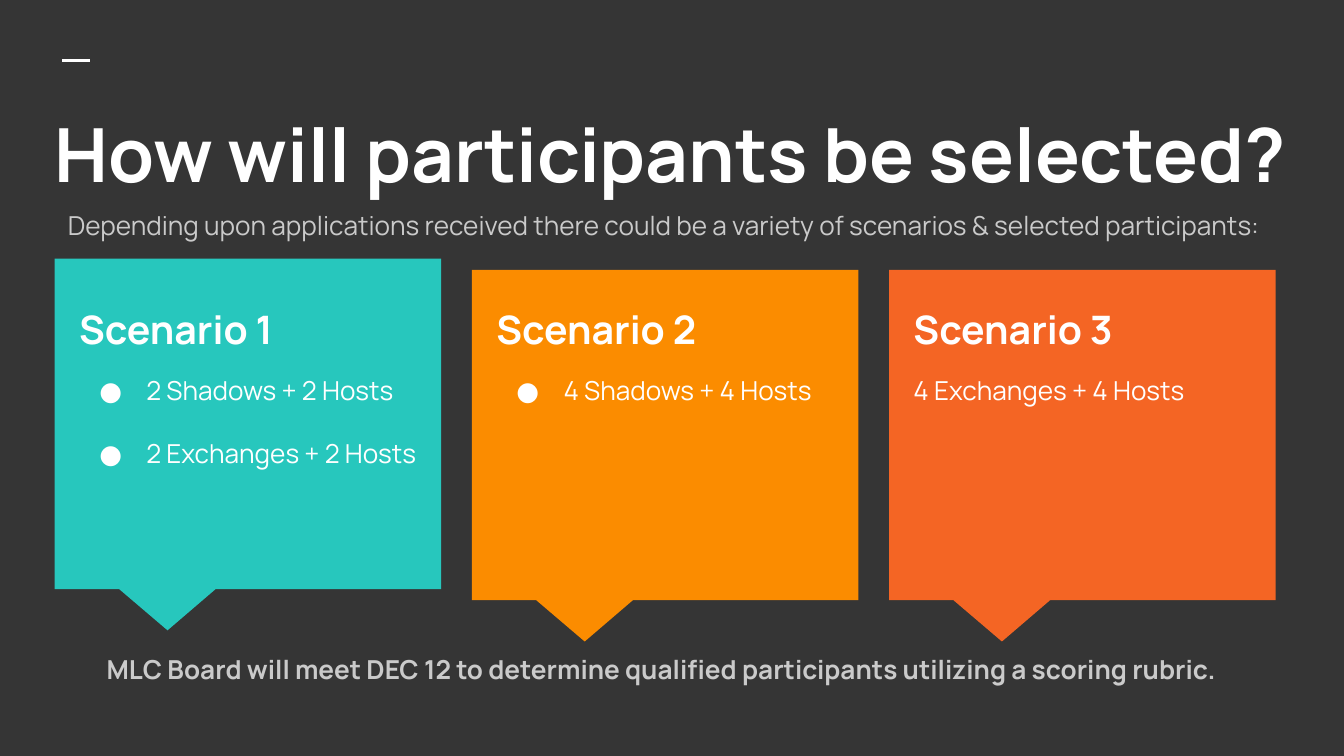
from lxml import etree
from pptx import Presentation
from pptx.dml.color import RGBColor
from pptx.enum.shapes import MSO_CONNECTOR, MSO_SHAPE
from pptx.enum.text import MSO_ANCHOR, PP_ALIGN
from pptx.oxml.ns import qn
from pptx.util import Pt

CALLOUT = MSO_SHAPE.RECTANGULAR_CALLOUT
STRAIGHT = MSO_CONNECTOR.STRAIGHT
TOP, MIDDLE = MSO_ANCHOR.TOP, MSO_ANCHOR.MIDDLE
LEFT, CENTER = PP_ALIGN.LEFT, PP_ALIGN.CENTER

FONT = "Manrope"
DARK, WHITE, GREY = "353535", "FFFFFF", "CACACA"

TITLE = "How will participants be selected?"
INTRO = ("Depending upon applications received there could be a variety "
         "of scenarios & selected participants:")
CLOSING = ("MLC Board will meet DEC 12 to determine qualified participants "
           "utilizing a scoring rubric.")
# heading, lines, bulleted, fill, card top
SCENARIOS = [
    ("Scenario 1", ["2 Shadows + 2 Hosts", "2 Exchanges + 2 Hosts"], True, "27C7BD", 138.6),
    ("Scenario 2", ["4 Shadows + 4 Hosts"], True, "FB8C00", 144.6),
    ("Scenario 3", ["4 Exchanges + 4 Hosts"], False, "F46524", 144.6),
]

CARD_LEFT, CARD_PITCH = 29.3, 223.5
CARD_WIDTH, CARD_HEIGHT = 207, 177
TEXT_OFFSET, TEXT_TOP, TEXT_HEIGHT = 6, 156.2, 157.7
INSET = 7.2
BULLET_MARGIN, BULLET_HANG = 36, 25.2
FIRST_GAP, NEXT_GAP = 12, 17


def color(value):
    return RGBColor.from_string(value)


def add_text_frame(slide, left, top, width, height, anchor=TOP):
    frame = slide.shapes.add_textbox(Pt(left), Pt(top), Pt(width), Pt(height)).text_frame
    frame.word_wrap = True
    frame.vertical_anchor = anchor
    frame.margin_left = frame.margin_right = Pt(INSET)
    frame.margin_top = frame.margin_bottom = Pt(INSET)
    return frame


def write(paragraph, text, size, text_color=WHITE, bold=False, align=LEFT):
    paragraph.alignment = align
    run = paragraph.add_run()
    run.text = text
    run.font.name = FONT
    run.font.size = Pt(size)
    run.font.bold = bold
    run.font.color.rgb = color(text_color)


def add_bullet(paragraph):
    properties = paragraph._p.get_or_add_pPr()
    properties.set("marL", str(Pt(BULLET_MARGIN)))
    properties.set("indent", str(-Pt(BULLET_HANG)))
    etree.SubElement(properties, qn("a:buFont"), typeface=FONT)
    etree.SubElement(properties, qn("a:buChar"), char="●")


def add_accent_line(slide):
    line = slide.shapes.add_connector(STRAIGHT, Pt(33.5), Pt(32.5), Pt(48), Pt(32.5))
    line.line.color.rgb = color(WHITE)
    line.line.width = Pt(1.5)
    etree.SubElement(line._element.spPr, qn("a:effectLst"))


def add_scenario(slide, index, heading, lines, bulleted, fill, top):
    left = CARD_LEFT + index * CARD_PITCH
    card = slide.shapes.add_shape(CALLOUT, Pt(left), Pt(top), Pt(CARD_WIDTH), Pt(CARD_HEIGHT))
    card.adjustments[0], card.adjustments[1] = -0.208, 0.625
    card.shadow.inherit = False
    card.fill.solid()
    card.fill.fore_color.rgb = color(fill)
    card.line.fill.background()

    frame = add_text_frame(slide, left + TEXT_OFFSET, TEXT_TOP,
                           CARD_WIDTH - TEXT_OFFSET, TEXT_HEIGHT)
    frame.margin_right = 0
    write(frame.paragraphs[0], heading, 21, bold=True)
    for number, text in enumerate(lines):
        paragraph = frame.add_paragraph()
        paragraph.space_before = Pt(NEXT_GAP if number else FIRST_GAP)
        write(paragraph, text, 14)
        if bulleted:
            add_bullet(paragraph)


def main():
    presentation = Presentation()
    presentation.slide_width, presentation.slide_height = Pt(720), Pt(405)
    slide = presentation.slides.add_slide(presentation.slide_layouts[6])
    slide.background.fill.solid()
    slide.background.fill.fore_color.rgb = color(DARK)

    add_accent_line(slide)
    title = add_text_frame(slide, 22.3, 50.4, 679, 80.6)
    write(title.paragraphs[0], TITLE, 40, bold=True)
    for index, scenario in enumerate(SCENARIOS):
        add_scenario(slide, index, *scenario)
    intro = add_text_frame(slide, 29.3, 110.2, 685.5, 20.2, MIDDLE)
    write(intro.paragraphs[0], INTRO, 14, GREY)
    closing = add_text_frame(slide, 17.3, 348.5, 674.6, 20.2, MIDDLE)
    write(closing.paragraphs[0], CLOSING, 14, GREY, bold=True, align=CENTER)

    presentation.save("out.pptx")


if __name__ == "__main__":
    main()
